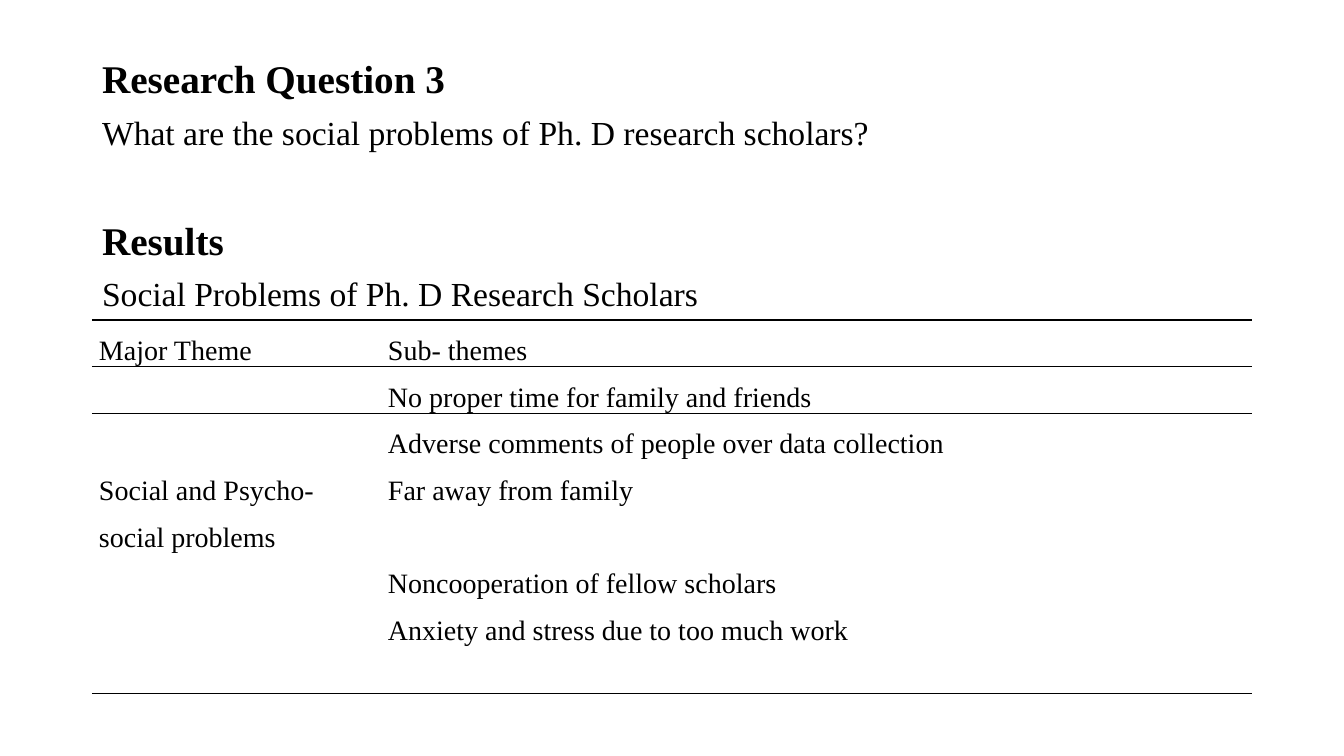
from lxml import etree
from pptx import Presentation
from pptx.dml.color import RGBColor
from pptx.enum.text import MSO_ANCHOR
from pptx.oxml.ns import qn
from pptx.util import Pt

TOP = MSO_ANCHOR.TOP
FONT = "Times New Roman"
BLACK = "000000"
NO_GRID_STYLE = "{2D5ABB26-0587-4C30-8999-92F81FD0307C}"
SLIDE_WIDTH, SLIDE_HEIGHT = 12192000, 6858000


def px(length):
    return round(length * SLIDE_WIDTH / 1344)


def add_run(paragraph, text, size, bold=False):
    run = paragraph.add_run()
    run.text = text
    run.font.name = FONT
    run.font.size = Pt(size)
    run.font.bold = bold
    run.font.color.rgb = RGBColor.from_string(BLACK)


prs = Presentation()
prs.slide_width, prs.slide_height = SLIDE_WIDTH, SLIDE_HEIGHT
slide = prs.slides.add_slide(prs.slide_layouts[1])
unused_title = slide.shapes.title.element
unused_title.getparent().remove(unused_title)

# Question and results headings: text, size, bold, space before
question = slide.placeholders[1]
question.left, question.top = px(92), px(55)
question.width, question.height = px(1160), px(638)
frame = question.text_frame
frame.vertical_anchor = TOP
headings = [
    ("Research Question 3", 28, True, 10),
    ("What are the social problems of Ph. D research scholars?", 24, False, 10),
    ("Results", 28, True, 49),
    ("Social Problems of Ph. D Research Scholars", 24, False, 10),
]
for i, (text, size, bold, space) in enumerate(headings):
    paragraph = frame.add_paragraph() if i else frame.paragraphs[0]
    paragraph.line_spacing = 0.9
    paragraph.space_before = Pt(space)
    properties = paragraph._p.get_or_add_pPr()
    properties.set("marL", "0")
    properties.set("indent", "0")
    etree.SubElement(properties, qn("a:buNone"))
    add_run(paragraph, text, size, bold)

# Table of themes
themes = [
    ("Major Theme", "Sub- themes"),
    ("", "No proper time for family and friends"),
    ("", "Adverse comments of people over data collection"),
    ("Social and Psycho-social problems", "Far away from family"),
    ("", "Noncooperation of fellow scholars"),
    ("", "Anxiety and stress due to too much work"),
    ("", ""),
]
row_heights = [46, 46, 46, 93, 46, 46, 47]
last = len(themes) - 1
table = slide.shapes.add_table(
    len(themes), 2, px(92), px(320), px(1160), px(sum(row_heights))).table
table.first_row = False
table.horz_banding = False
table._tbl.tblPr.find(qn("a:tableStyleId")).text = NO_GRID_STYLE
for column, width in zip(table.columns, (289, 871)):
    column.width = px(width)

# Rules above and below the header, and below the last row
row_rules = {0: ("a:lnT", "a:lnB"), 1: ("a:lnT",), last: ("a:lnB",)}
for r, row in enumerate(themes):
    table.rows[r].height = px(row_heights[r])
    for c, text in enumerate(row):
        cell = table.cell(r, c)
        cell.margin_left = cell.margin_right = px(7)
        cell.margin_top = cell.margin_bottom = 0
        cell.fill.background()
        if text:
            paragraph = cell.text_frame.paragraphs[0]
            paragraph.line_spacing = 1.5
            add_run(paragraph, text, 20)
        cell_properties = cell._tc.get_or_add_tcPr()
        for position, side in enumerate(row_rules.get(r, ())):
            rule = etree.Element(qn(side), w=str(Pt(1)))
            solid = etree.SubElement(rule, qn("a:solidFill"))
            etree.SubElement(solid, qn("a:srgbClr"), val=BLACK)
            cell_properties.insert(position, rule)

prs.save("out.pptx")
